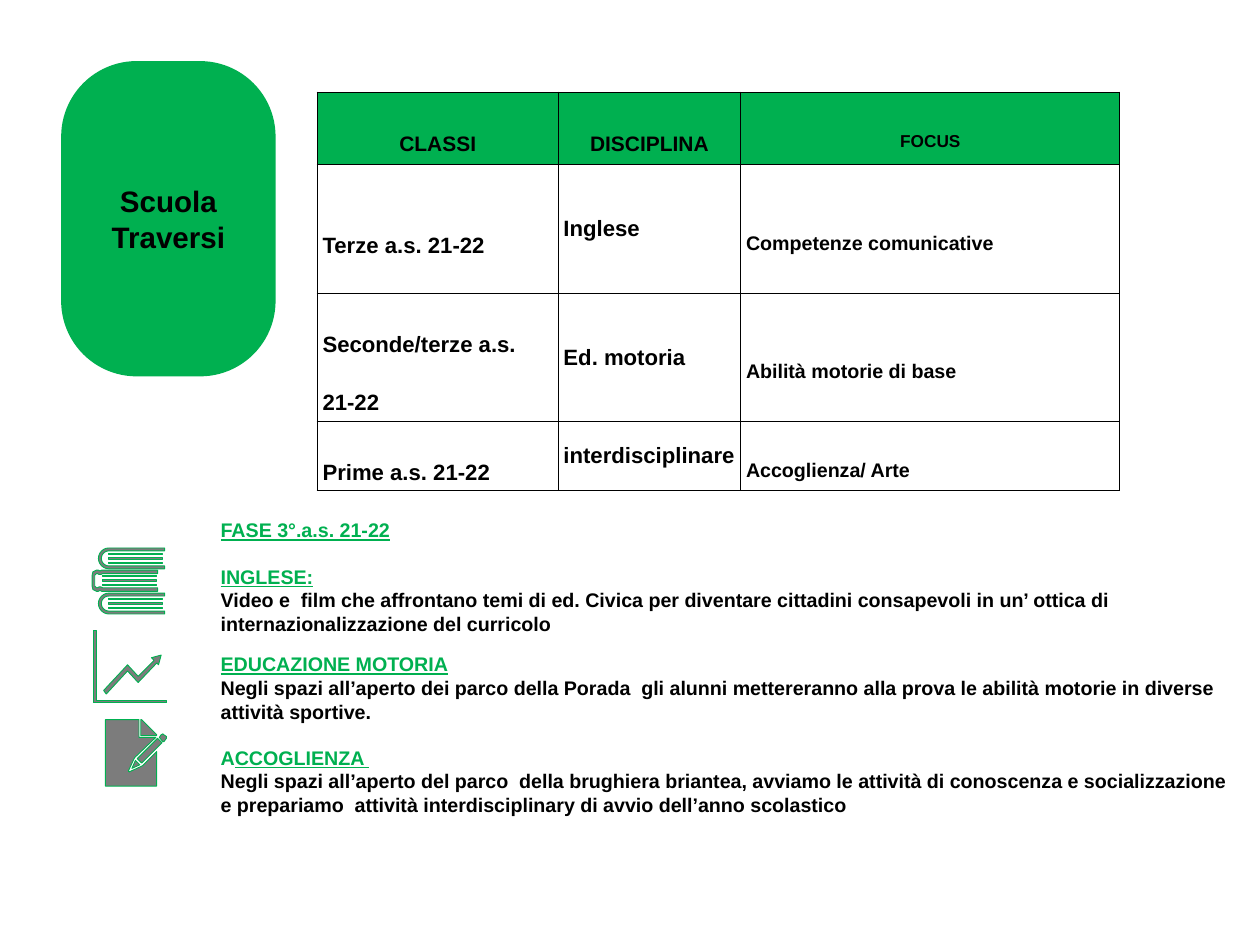
import math
import pptx
import pptx.util
import pptx.dml.color
import pptx.enum.shapes
import pptx.enum.text
import pptx.oxml
import pptx.oxml.ns

Inches = pptx.util.Inches
Pt = pptx.util.Pt
RGBColor = pptx.dml.color.RGBColor
ALIGN = pptx.enum.text.PP_ALIGN
MIDDLE = pptx.enum.text.MSO_ANCHOR.MIDDLE

GREEN = RGBColor(0x00, 0xB0, 0x50)
GRAY = RGBColor(0x7C, 0x7C, 0x7C)
BLACK = RGBColor(0, 0, 0)
INSET = Inches(0.06)
SIDES = ("margin_left", "margin_top", "margin_right", "margin_bottom")


def write(para, text, size, color=BLACK, line=False):
    run = para.add_run()
    run.text = text
    look = {"name": "Arial", "size": Pt(size), "bold": True, "underline": line}
    for key, value in look.items():
        setattr(run.font, key, value)
    run.font.color.rgb = color


def draw(parts):
    pen = None
    for part in parts:
        dots = [(x * 1000, y * 1000) for x, y in part]
        if pen is None:
            pen = slide.shapes.build_freeform(*dots[0], scale=Inches(0.001))
        else:
            pen.move_to(*dots[0])
        pen.add_line_segments(dots[1:], close=True)
    icon = pen.convert_to_shape()
    icon.shadow.inherit = False
    icon.fill.solid()
    icon.fill.fore_color.rgb = GRAY
    icon.line.color.rgb = GREEN
    icon.line.width = Pt(0.75)


deck = pptx.Presentation()
deck.slide_width = Inches(14.22)
deck.slide_height = Inches(10.67)
slide = deck.slides.add_slide(deck.slide_layouts[6])

rows = [
    ("CLASSI", "DISCIPLINA", "FOCUS"),
    ("Terze a.s. 21-22", "Inglese", "Competenze comunicative"),
    ("Seconde/terze a.s. 21-22", "Ed. motoria", "Abilità motorie di base"),
    ("Prime a.s. 21-22", "interdisciplinare", "Accoglienza/ Arte"),
]
table = slide.shapes.add_table(
    4, 3, Inches(3.58), Inches(1.04), Inches(9.06), Inches(4.5)).table
table.first_row = False
table.horz_banding = False
for col, width in zip(table.columns, (2.72, 2.06, 4.28)):
    col.width = Inches(width)
for row, height in zip(table.rows, (0.82, 1.45, 1.45, 0.78)):
    row.height = Inches(height)

for r, texts in enumerate(rows):
    for c, text in enumerate(texts):
        cell = table.cell(r, c)
        cell.vertical_anchor = MIDDLE
        for side in SIDES:
            setattr(cell, side, INSET)
        para = cell.text_frame.paragraphs[0]
        sizes = (18, 18, 16) if r else (17, 17, 14)
        write(para, text, sizes[c])
        if r == 0 or c != 1:
            para.line_spacing = 2.35
        props = cell._tc.get_or_add_tcPr()
        for edge in ("lnL", "lnR", "lnT", "lnB"):
            props.append(pptx.oxml.parse_xml(
                f'<a:{edge} {pptx.oxml.ns.nsdecls("a")} w="12700"><a:solidFill>'
                f'<a:srgbClr val="{BLACK}"/></a:solidFill></a:{edge}>'))
        if r == 0:
            para.alignment = ALIGN.CENTER
            cell.fill.solid()
            cell.fill.fore_color.rgb = GREEN
        else:
            cell.fill.background()

badge = slide.shapes.add_shape(
    pptx.enum.shapes.MSO_SHAPE.ROUNDED_RECTANGLE,
    Inches(0.69), Inches(0.69), Inches(2.42), Inches(3.56))
badge.adjustments[0] = 0.352
badge.shadow.inherit = False
badge.fill.solid()
badge.fill.fore_color.rgb = GREEN
badge.line.fill.background()
frame = badge.text_frame
frame.word_wrap = True
frame.vertical_anchor = MIDDLE
for side in SIDES:
    setattr(frame, side, INSET)
frame.paragraphs[0].alignment = ALIGN.CENTER
write(frame.paragraphs[0], "Scuola Traversi", 24)

phases = [
    (0, [("FASE 3°.a.s. 21-22", True)], None),
    (18.4, [("INGLESE:", True)],
     "Video e  film che affrontano temi di ed. Civica per diventare cittadini "
     "consapevoli in un’ ottica di internazionalizzazione del curricolo"),
    (13.8, [("EDUCAZIONE MOTORIA", True)],
     "Negli spazi all’aperto dei parco della Porada  gli alunni mettereranno "
     "alla prova le abilità motorie in diverse attività sportive."),
    (18.4, [("A", False), ("CCOGLIENZA ", True)],
     "Negli spazi all’aperto del parco  della brughiera briantea, avviamo le "
     "attività di conoscenza e socializzazione e prepariamo  attività "
     "interdisciplinary di avvio dell’anno scolastico"),
]
frame = slide.shapes.add_textbox(
    Inches(2.43), Inches(5.49), Inches(11.49), Inches(4.08)).text_frame
frame.word_wrap = True
for side in SIDES:
    setattr(frame, side, INSET)
frame.margin_top = Inches(0.36)
para = frame.paragraphs[0]
for gap, heads, body in phases:
    if gap:
        para = frame.add_paragraph()
        para.space_before = Pt(gap)
    for text, line in heads:
        write(para, text, 16, GREEN, line)
    if body:
        write(frame.add_paragraph(), body, 16)

books = []
turns = [math.radians(90 + 15 * i) for i in range(13)]
for top in (6.19, 6.7):
    mid = top + 0.118
    outer = [(1.23 + 0.118 * math.cos(t), mid - 0.118 * math.sin(t)) for t in turns]
    inner = [(1.23 + 0.085 * math.cos(t), mid - 0.085 * math.sin(t)) for t in turns]
    books.append([(1.86, top)] + outer + [(1.86, top + 0.236), (1.86, top + 0.203)]
                 + inner[::-1] + [(1.86, top + 0.033)])
spine = [(1.78, 6.44), (1.15, 6.44), (1.13, 6.45), (1.11, 6.44), (1.09, 6.44),
         (1.05, 6.46), (1.04, 6.5)]
hollow = [(1.07, 6.5), (1.09, 6.48), (1.1, 6.48), (1.12, 6.49), (1.14, 6.49),
          (1.16, 6.48), (1.78, 6.48)]
books.append(spine + [(x, 13.12 - y) for x, y in spine[::-1]]
             + [(x, 13.12 - y) for x, y in hollow[::-1]] + hollow)
for left, right, top in ((1.23, 1.83, 6.19), (1.16, 1.77, 6.44), (1.23, 1.83, 6.7)):
    for i in range(3):
        y = top + 0.06 + 0.05 * i
        books.append([(left, y), (right, y), (right, y + 0.015), (left, y + 0.015)])
draw(books)

draw([
    [(1.05, 7.12), (1.05, 7.94), (1.88, 7.94), (1.88, 7.91), (1.09, 7.91), (1.09, 7.12)],
    [(1.82, 7.4), (1.71, 7.43), (1.74, 7.46), (1.56, 7.64), (1.44, 7.51), (1.17, 7.8),
     (1.2, 7.84), (1.44, 7.58), (1.56, 7.71), (1.77, 7.49), (1.79, 7.51)],
])

draw([
    [(1.19, 8.13), (1.19, 8.88), (1.77, 8.88), (1.77, 8.49), (1.61, 8.65), (1.59, 8.66),
     (1.46, 8.72), (1.45, 8.71), (1.51, 8.58), (1.52, 8.56), (1.76, 8.33), (1.57, 8.33),
     (1.57, 8.13)],
    [(1.59, 8.13), (1.59, 8.31), (1.77, 8.31), (1.77, 8.3), (1.6, 8.13)],
    [(1.84, 8.29), (1.82, 8.3), (1.8, 8.33), (1.84, 8.38), (1.85, 8.38), (1.88, 8.34),
     (1.88, 8.32), (1.85, 8.3)],
    [(1.78, 8.34), (1.55, 8.57), (1.6, 8.62), (1.83, 8.39)],
    [(1.53, 8.59), (1.49, 8.68), (1.58, 8.64)],
])

deck.save("out.pptx")
